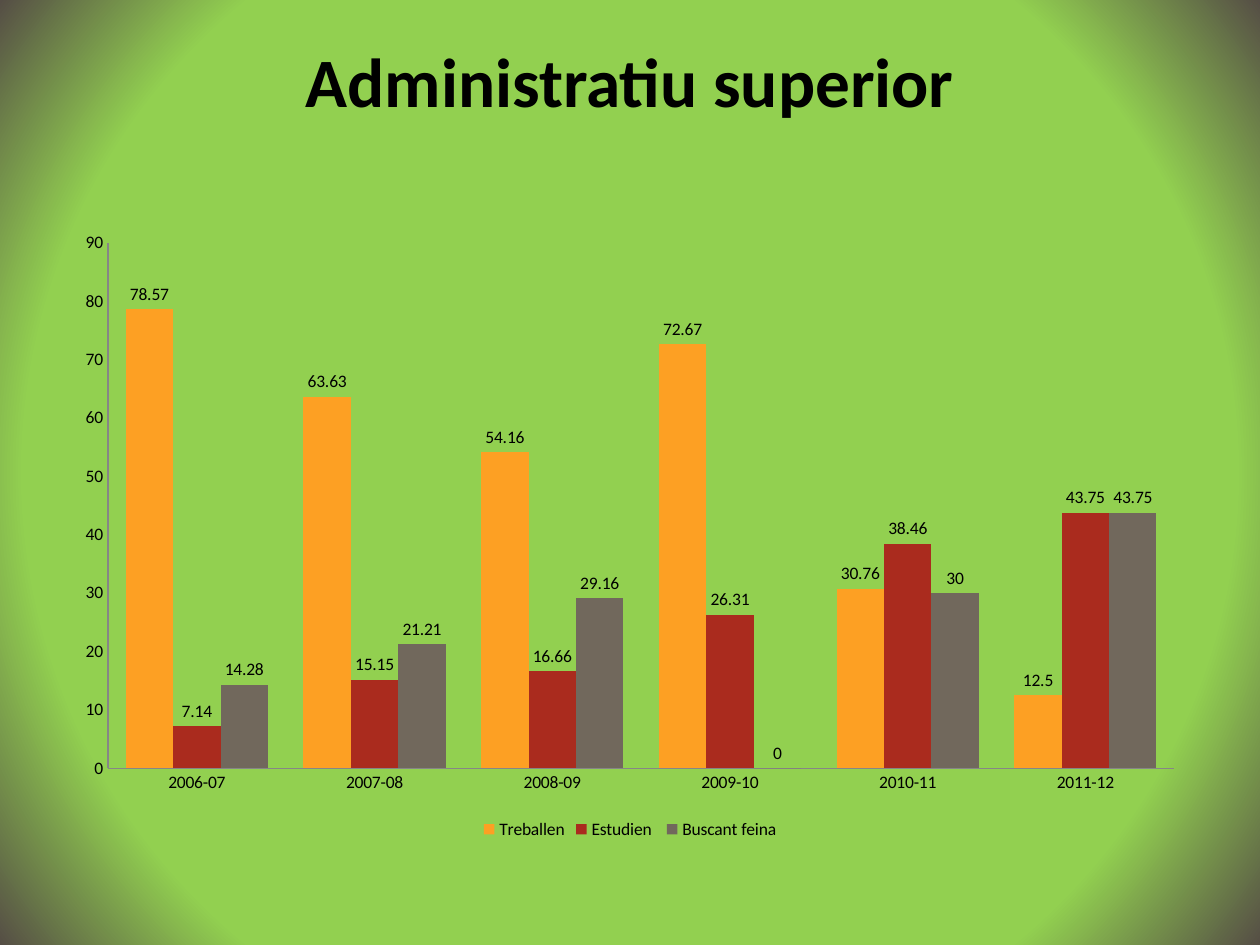
from dataclasses import dataclass

from lxml.etree import SubElement
from pptx import Presentation
from pptx.chart.data import CategoryChartData
from pptx.dml.color import RGBColor
from pptx.enum.chart import XL_CHART_TYPE as ChartType
from pptx.enum.chart import XL_LABEL_POSITION as LabelPosition
from pptx.enum.chart import XL_LEGEND_POSITION as LegendPosition
from pptx.enum.chart import XL_TICK_MARK as TickMark
from pptx.enum.text import MSO_ANCHOR as Anchor
from pptx.enum.text import PP_ALIGN as Align
from pptx.oxml.ns import qn
from pptx.util import Inches, Pt


@dataclass(frozen=True)
class Theme:
    """Colours, font and type sizes of the slide."""

    font: str = "Calibri"
    title_size: float = 39.6
    chart_size: float = 10
    text: str = "000000"
    axis: str = "868686"
    centre: str = "92D050"
    edge: str = "554E45"


THEME = Theme()
COURSES = ["2006-07", "2007-08", "2008-09", "2009-10", "2010-11", "2011-12"]
OUTCOMES = [
    ("Treballen", "FDA023", [78.57, 63.63, 54.16, 72.67, 30.76, 12.5]),
    ("Estudien ", "AA2B1E", [7.14, 15.15, 16.66, 26.31, 38.46, 43.75]),
    ("Buscant feina", "71685C", [14.28, 21.21, 29.16, 0, 30, 43.75]),
]


def style_font(font, size, bold=False):
    """Apply the theme font at the given size."""
    font.name = THEME.font
    font.size = Pt(size)
    font.bold = bold
    font.color.rgb = RGBColor.from_string(THEME.text)


def paint_background(page):
    """Fill the page with a circular gradient that darkens at the corners."""
    fill = page.background.fill
    fill.gradient()
    stops = zip(fill.gradient_stops, [(0.77, THEME.centre), (1, THEME.edge)])
    for stop, (position, color) in stops:
        stop.position = position
        stop.color.rgb = RGBColor.from_string(color)
    gradient = page.background._cSld.find(".//" + qn("a:gradFill"))
    gradient.remove(gradient.find(qn("a:lin")))
    circle = SubElement(gradient, qn("a:path"), path="circle")
    SubElement(circle, qn("a:fillToRect"), l="50000", t="50000", r="50000", b="50000")


def set_title(page, text):
    """Place the title at the top of its placeholder."""
    title = page.shapes.title
    title.left, title.top = Inches(0.5), Inches(0.3)
    title.width, title.height = Inches(9), Inches(1.25)
    frame = title.text_frame
    frame.text = text
    frame.vertical_anchor = Anchor.TOP
    frame.margin_top = 0
    para = frame.paragraphs[0]
    para.alignment = Align.CENTER
    style_font(para.runs[0].font, THEME.title_size, bold=True)


def style_axis(axis):
    """Give an axis a plain grey line without ticks or gridlines."""
    axis.has_major_gridlines = False
    axis.major_tick_mark = axis.minor_tick_mark = TickMark.NONE
    axis.format.line.color.rgb = RGBColor.from_string(THEME.axis)


def style_series(series, color):
    """Colour a series and show its values above the columns."""
    series.format.fill.solid()
    series.format.fill.fore_color.rgb = RGBColor.from_string(color)
    series.invert_if_negative = False
    labels = series.data_labels
    labels.show_value = True
    labels.position = LabelPosition.OUTSIDE_END
    style_font(labels.font, THEME.chart_size)


def add_outcome_chart(page):
    """Add the clustered columns of outcomes per course."""
    data = CategoryChartData()
    data.categories = COURSES
    for name, _, values in OUTCOMES:
        data.add_series(name, values)
    chart = page.shapes.add_chart(
        ChartType.COLUMN_CLUSTERED,
        Inches(0.5), Inches(1.75), Inches(9), Inches(4.95), data,
    ).chart
    style_font(chart.font, THEME.chart_size)
    chart.has_title = False
    chart.has_legend = True
    chart.legend.position = LegendPosition.BOTTOM
    chart.legend.include_in_layout = False
    style_axis(chart.category_axis)
    style_axis(chart.value_axis)
    chart.value_axis.minimum_scale = 0
    chart.value_axis.maximum_scale = 90
    chart.value_axis.major_unit = 10
    plot = chart.plots[0]
    plot.gap_width = 75
    plot.overlap = 0
    plot.vary_by_categories = False
    for series, (_, color, _) in zip(plot.series, OUTCOMES):
        style_series(series, color)


def main():
    """Build the slide and save the deck."""
    deck = Presentation()
    deck.slide_width, deck.slide_height = Inches(10), Inches(7.5)
    page = deck.slides.add_slide(deck.slide_layouts[5])
    paint_background(page)
    set_title(page, "Administratiu superior")
    add_outcome_chart(page)
    deck.save("out.pptx")


if __name__ == "__main__":
    main()
